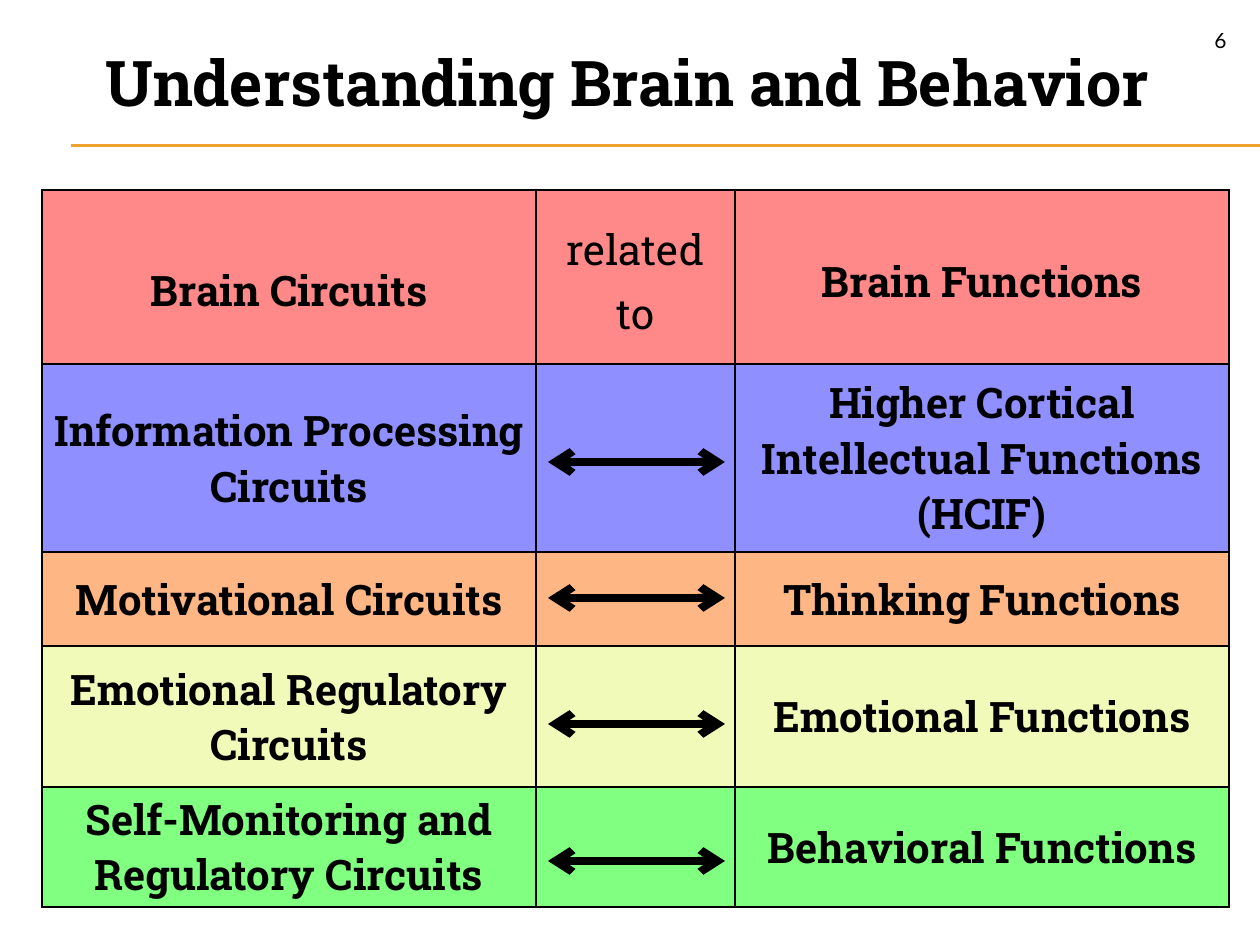
from lxml import etree
from pptx import Presentation
from pptx.dml.color import RGBColor
from pptx.enum.shapes import MSO_CONNECTOR
from pptx.enum.text import MSO_ANCHOR, PP_ALIGN
from pptx.oxml.ns import qn
from pptx.util import Emu, Pt

STRAIGHT = MSO_CONNECTOR.STRAIGHT
MIDDLE = MSO_ANCHOR.MIDDLE
CENTER, RIGHT = PP_ALIGN.CENTER, PP_ALIGN.RIGHT
EMU_PER_PX = 914400 / 126
SERIF, SANS = "Roboto Slab", "Lato"
BLACK, GOLD = "000000", "F0A22E"

COLUMN_WIDTHS = [494, 199, 494]
# Row height, fill, circuit, function, arrow distance from the row top
ROWS = [
    (174, "FF8989", "Brain Circuits", "Brain Functions", None),
    (188, "8F8FFF", "Information Processing Circuits",
     "Higher Cortical Intellectual Functions (HCIF)", 98),
    (94, "FFB685", "Motivational Circuits", "Thinking Functions", 46),
    (141, "F1FAB8", "Emotional Regulatory Circuits", "Emotional Functions", 78),
    (120, "81FF81", "Self-Monitoring and Regulatory Circuits",
     "Behavioral Functions", 74),
]


def px(value):
    return Emu(round(value * EMU_PER_PX))


def color(hex_code):
    return RGBColor.from_string(hex_code)


def write(frame, lines, size, font, bold, align, spacing=None):
    frame.text = "\n".join(lines)
    for paragraph in frame.paragraphs:
        paragraph.alignment = align
        if spacing:
            paragraph.line_spacing = spacing
        for run in paragraph.runs:
            run.font.size = Pt(size)
            run.font.name = font
            run.font.bold = bold
            run.font.color.rgb = color(BLACK)


def add_label(slide, box, text, size, font, bold, align):
    frame = slide.shapes.add_textbox(*map(px, box)).text_frame
    frame.word_wrap = True
    write(frame, [text], size, font, bold, align)


def add_line(slide, left, right, y, hex_code, width, arrows=False):
    line = slide.shapes.add_connector(STRAIGHT, px(left), px(y), px(right), px(y))
    line.line.color.rgb = color(hex_code)
    line.line.width = Pt(width)
    properties = line._element.spPr
    if arrows:
        outline = properties.find(qn("a:ln"))
        for end in ("a:headEnd", "a:tailEnd"):
            etree.SubElement(outline, qn(end), type="arrow")
    etree.SubElement(properties, qn("a:effectLst"))


def style_cell(cell, fill):
    cell.fill.solid()
    cell.fill.fore_color.rgb = color(fill)
    cell.vertical_anchor = MIDDLE
    cell.margin_left = cell.margin_right = px(9)
    cell.margin_top = cell.margin_bottom = 0
    properties = cell._tc.get_or_add_tcPr()
    for position, side in enumerate(("a:lnL", "a:lnR", "a:lnT", "a:lnB")):
        border = etree.Element(qn(side), w=str(Pt(1)))
        solid = etree.SubElement(border, qn("a:solidFill"))
        etree.SubElement(solid, qn("a:srgbClr"), val=BLACK)
        properties.insert(position, border)


def add_heading(slide, left, top, width):
    add_label(slide, (left, top, width, 89), "Understanding Brain and Behavior",
              36, SERIF, True, CENTER)
    # Double rule under the title, running to the slide edge
    for offset in (108, 109):
        add_line(slide, left + 42, 1260, top + offset, GOLD, 0.75)


def add_circuit_table(slide, left, top):
    width, height = sum(COLUMN_WIDTHS), sum(row[0] for row in ROWS)
    table = slide.shapes.add_table(len(ROWS), len(COLUMN_WIDTHS), px(left), px(top),
                                   px(width), px(height)).table
    table.first_row = table.horz_banding = False
    for column, column_width in zip(table.columns, COLUMN_WIDTHS):
        column.width = px(column_width)

    arrow_left = left + COLUMN_WIDTHS[0] + 12
    row_top = top
    for index, (row_height, fill, circuit, function, arrow) in enumerate(ROWS):
        table.rows[index].height = px(row_height)
        circuit_cell, relation_cell, function_cell = table.rows[index].cells
        for cell in (circuit_cell, relation_cell, function_cell):
            style_cell(cell, fill)
        spacing = 1.15 if index == 0 else None
        for cell, text in ((circuit_cell, circuit), (function_cell, function)):
            write(cell.text_frame, [text], 24, SERIF, True, CENTER, spacing)
        if arrow is None:
            # Header row: the circuit heading sits a little lower
            circuit_cell.margin_top = px(18)
            write(relation_cell.text_frame, ["related", "to"], 24, SERIF, False,
                  CENTER, spacing)
        else:
            add_line(slide, arrow_left, arrow_left + 177, row_top + arrow,
                     BLACK, 4.5, arrows=True)
        row_top += row_height


def main():
    presentation = Presentation()
    presentation.slide_width, presentation.slide_height = px(1260), px(945)
    slide = presentation.slides.add_slide(presentation.slide_layouts[6])
    add_heading(slide, 29, 37, 1197)
    add_circuit_table(slide, 42, 190)
    # Page number
    add_label(slide, (1134, 21, 105, 34), "6", 12, SANS, False, RIGHT)
    presentation.save("out.pptx")


if __name__ == "__main__":
    main()
